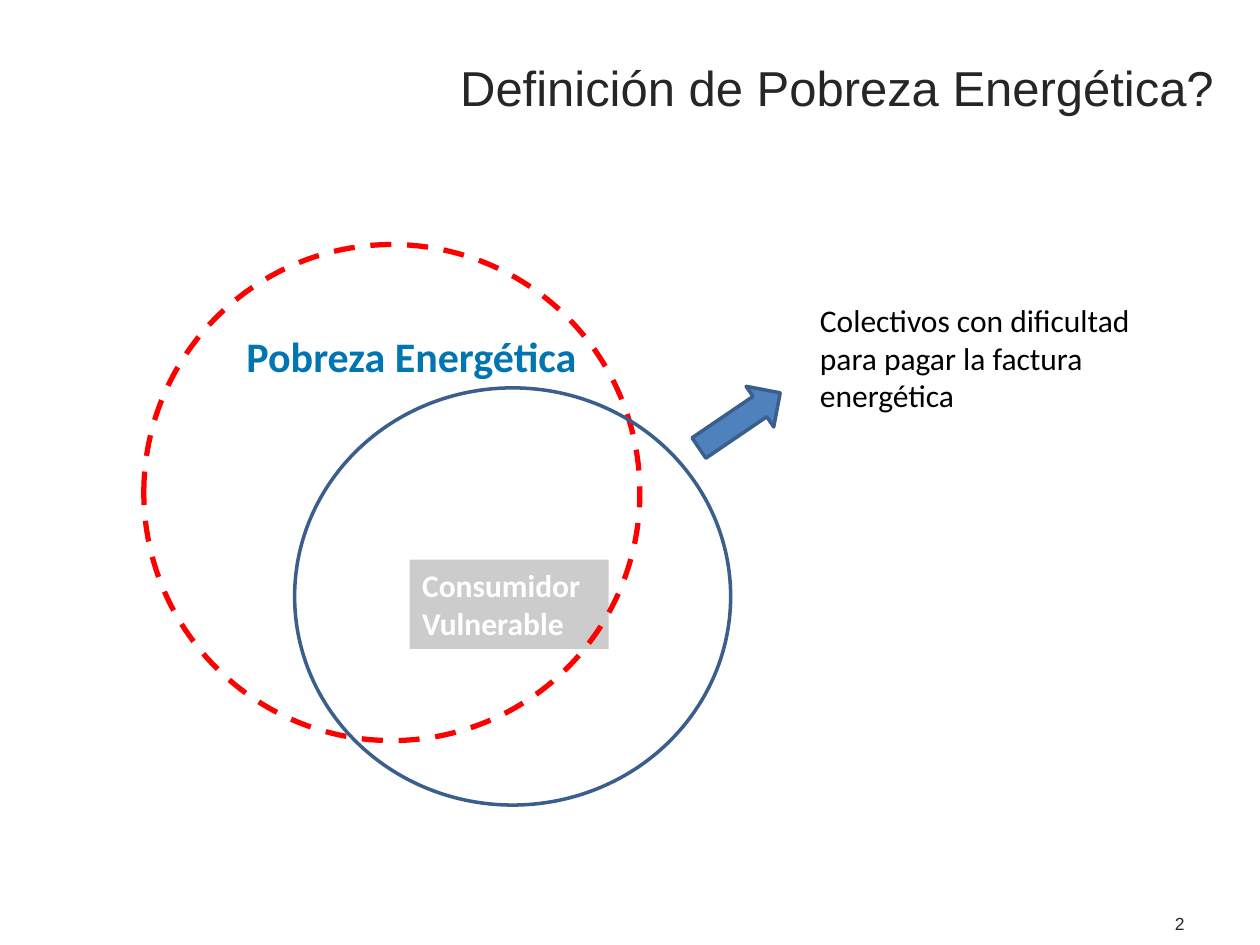
from pptx import Presentation
from pptx.dml.color import RGBColor
from pptx.enum.dml import MSO_LINE
from pptx.enum.shapes import MSO_SHAPE as SHAPE
from pptx.enum.text import MSO_ANCHOR as ANCHOR, MSO_AUTO_SIZE as FIT, PP_ALIGN as ALIGN
from pptx.oxml.ns import qn
from pptx.util import Cm, Pt
from lxml import etree


def rgb(value):
    return RGBColor.from_string(value)


class Deck:
    HEAD, BODY = "Arial", "Calibri"
    DARK, BLACK, WHITE = "262626", "000000", "FFFFFF"
    RED, BLUE, NAVY, TEAL = "FF0000", "4F81BD", "3A5F8C", "0075B0"

    def __init__(self, prs):
        self.s = prs.slides.add_slide(prs.slide_layouts[5])

    def put_text(self, sp, text, size, color, font=BODY, bold=False, align=ALIGN.LEFT,
                 anchor=ANCHOR.TOP, wrap=True, spacing=None):
        tf = sp.text_frame
        tf.word_wrap = wrap
        tf.auto_size = FIT.NONE
        tf.vertical_anchor = anchor
        p = tf.paragraphs[0]
        p.alignment = align
        p.line_spacing = spacing
        r = p.add_run()
        r.text = text
        r.font.name, r.font.size, r.font.bold = font, Pt(size), bold
        r.font.color.rgb = rgb(color)
        return tf

    def title(self, box, text):
        sp = self.s.shapes.title
        sp.left, sp.top, sp.width, sp.height = map(Cm, box)
        tf = self.put_text(sp, text, 28, self.DARK, self.HEAD, align=ALIGN.RIGHT)
        tf.margin_top = Cm(0.25)

    def text(self, box, text, size, color, **style):
        sp = self.s.shapes.add_textbox(*map(Cm, box))
        self.put_text(sp, text, size, color, **style)

    def shape(self, kind, box, fill=None, alpha=None, line=None, width=2, dash=None, rotation=0):
        sp = self.s.shapes.add_shape(kind, *map(Cm, box))
        sp.shadow.inherit = False
        sp.rotation = rotation
        if fill:
            sp.fill.solid()
            sp.fill.fore_color.rgb = rgb(fill)
        else:
            sp.fill.background()
        if alpha:
            clr = sp.element.spPr.find(".//" + qn("a:srgbClr"))
            etree.SubElement(clr, qn("a:alpha")).set("val", str(alpha * 1000))
        if line:
            sp.line.color.rgb = rgb(line)
            sp.line.width = Pt(width)
            sp.line.dash_style = dash
        else:
            sp.line.fill.background()
        return sp


def main():
    prs = Presentation()
    prs.slide_width, prs.slide_height = Cm(25.4), Cm(19.05)
    d = Deck(prs)

    # Title and page number
    d.title((6.91, 0.91, 17.81, 2.01), "Definición de Pobreza Energética?")
    d.text((18.21, 18.11, 5.92, 1.02), "2", 10, d.DARK, font=d.HEAD,
           align=ALIGN.RIGHT, anchor=ANCHOR.MIDDLE)

    # Labels inside the circles
    d.text((4.72, 6.71, 7.24, 1.12), "Pobreza Energética", 24, d.TEAL,
           bold=True, wrap=False, spacing=Pt(24))
    tag = d.shape(SHAPE.RECTANGLE, (8.26, 11.28, 4.01, 1.8), fill=d.BLACK, alpha=20)
    d.put_text(tag, "Consumidor Vulnerable", 18, d.WHITE, bold=True)

    # Overlapping circles
    d.shape(SHAPE.OVAL, (2.9, 4.93, 10, 10), line=d.RED, width=3, dash=MSO_LINE.DASH)
    d.shape(SHAPE.OVAL, (5.94, 7.82, 8.79, 8.41), line=d.NAVY)

    # Explanation and its arrow
    d.text((16.28, 5.94, 7.34, 2.57),
           "Colectivos con dificultad para pagar la factura energética", 18, d.BLACK)
    d.shape(SHAPE.RIGHT_ARROW, (13.92, 7.98, 1.98, 0.99), fill=d.BLUE, line=d.NAVY,
            rotation=325.8)

    prs.save("out.pptx")


if __name__ == "__main__":
    main()
